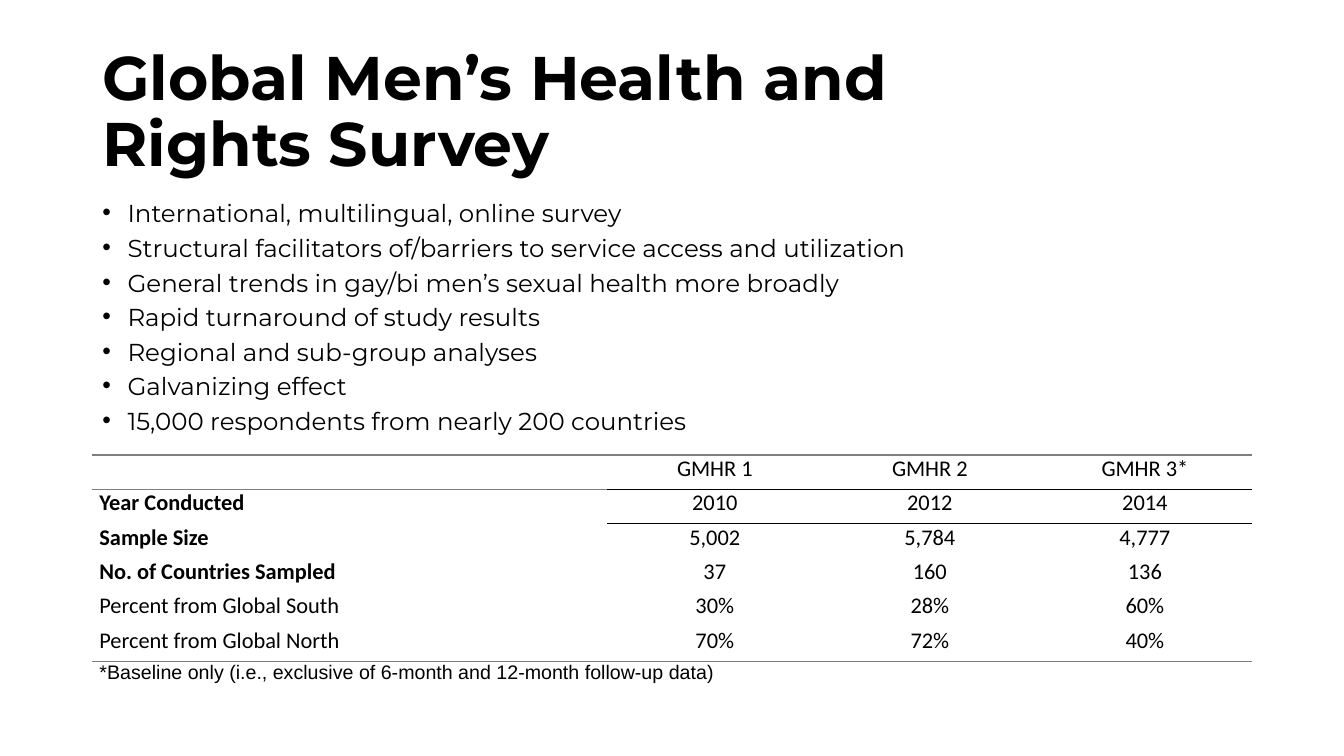
from lxml import etree
from pptx import Presentation
from pptx.dml.color import RGBColor
from pptx.enum.text import MSO_ANCHOR, MSO_AUTO_SIZE, PP_ALIGN
from pptx.oxml.ns import qn
from pptx.util import Inches, Pt

BLACK = RGBColor(0x00, 0x00, 0x00)
GREY = RGBColor(0x7F, 0x7F, 0x7F)
LEFT, CENTER = PP_ALIGN.LEFT, PP_ALIGN.CENTER
TOP, MIDDLE = MSO_ANCHOR.TOP, MSO_ANCHOR.MIDDLE
NO_AUTOFIT = MSO_AUTO_SIZE.NONE
NO_STYLE = "{2D5ABB26-0587-4C30-8999-92F81FD0307C}"
COLS, ROWS = 160, 90

TITLE = ["Global Men’s Health and ", "Rights Survey"]
BULLETS = [
    "International, multilingual, online survey",
    "Structural facilitators of/barriers to service access and utilization",
    "General trends in gay/bi men’s sexual health more broadly",
    "Rapid turnaround of study results",
    "Regional and sub-group analyses",
    "Galvanizing effect",
    "15,000 respondents from nearly 200 countries",
]
SURVEYS = [
    ["", "GMHR 1", "GMHR 2", "GMHR 3*"],
    ["Year Conducted", "2010", "2012", "2014"],
    ["Sample Size", "5,002", "5,784", "4,777"],
    ["No. of Countries Sampled", "37", "160", "136"],
    ["Percent from Global South", "30%", "28%", "60%"],
    ["Percent from Global North", "70%", "72%", "40%"],
]
BOLD_LABELS = {"Year Conducted", "Sample Size", "No. of Countries Sampled"}
FOOTNOTE = "*Baseline only (i.e., exclusive of 6-month and 12-month follow-up data)"


class SlideBuilder:
    """Adds styled elements to one slide on a grid of columns and rows."""

    def __init__(self, prs):
        self.col = prs.slide_width / COLS
        self.row = prs.slide_height / ROWS
        self.s = prs.slides.add_slide(prs.slide_layouts[5])

    def box(self, x, y, w, h):
        """Return grid lengths as slide lengths."""
        return (round(x * self.col), round(y * self.row),
                round(w * self.col), round(h * self.row))

    def run(self, p, text, size, font="Montserrat", bold=False):
        """Add one styled run to a paragraph."""
        r = p.add_run()
        r.text = text
        r.font.size = Pt(size)
        r.font.name = font
        r.font.bold = bold
        r.font.color.rgb = BLACK

    def frame(self, sp, anchor):
        """Prepare a shape's text frame."""
        tf = sp.text_frame
        tf.word_wrap = True
        tf.auto_size = NO_AUTOFIT
        tf.vertical_anchor = anchor
        return tf

    def title(self, lines, *area):
        """Place and fill the title."""
        sp = self.s.shapes.title
        sp.left, sp.top, sp.width, sp.height = self.box(*area)
        p = self.frame(sp, MIDDLE).paragraphs[0]
        p.alignment = LEFT
        p.line_spacing = 0.9
        for i, line in enumerate(lines):
            if i:
                p.add_line_break()
            self.run(p, line, 44, bold=True)

    def bullets(self, items, *area):
        """Add a bulleted list."""
        tf = self.frame(self.s.shapes.add_textbox(*self.box(*area)), TOP)
        for i, item in enumerate(items):
            p = tf.add_paragraph() if i else tf.paragraphs[0]
            p.line_spacing = 0.7
            p.space_before = Pt(10)
            pPr = p._p.get_or_add_pPr()
            pPr.set("marL", str(Inches(0.25)))
            pPr.set("indent", str(-Inches(0.25)))
            etree.SubElement(pPr, qn("a:buFont")).set("typeface", "Arial")
            etree.SubElement(pPr, qn("a:buChar")).set("char", "•")
            self.run(p, item, 17.5)

    def border(self, cell, side, color):
        """Draw a one-point line along a cell's side."""
        ln = etree.SubElement(cell._tc.get_or_add_tcPr(), qn(f"a:ln{side}"), w=str(Pt(1)))
        fill = etree.SubElement(ln, qn("a:solidFill"))
        etree.SubElement(fill, qn("a:srgbClr"), val=str(color))

    def table(self, rows, widths, heights, rules, x, y):
        """Add a plain table; rules maps a row to its top line's colour and first column."""
        area = self.box(x, y, sum(widths), sum(heights))
        tbl = self.s.shapes.add_table(len(rows), len(widths), *area).table
        tbl.first_row = tbl.horz_banding = False
        tbl._tbl.tblPr.find(qn("a:tableStyleId")).text = NO_STYLE
        for column, width in zip(tbl.columns, widths):
            column.width = round(width * self.col)
        for i, (texts, height) in enumerate(zip(rows, heights)):
            tbl.rows[i].height = round(height * self.row)
            for j in range(len(widths)):
                cell = tbl.cell(i, j)
                cell.margin_left = cell.margin_right = Inches(0.07)
                cell.margin_top = cell.margin_bottom = 0
                for side, edge in (("T", i), ("B", i + 1)):
                    color, first = rules.get(edge, (None, 0))
                    if color is not None and j >= first:
                        self.border(cell, side, color)
                cell.fill.background()
                if j < len(texts) and texts[j]:
                    p = cell.text_frame.paragraphs[0]
                    p.alignment = CENTER if j else LEFT
                    note = texts[j] == FOOTNOTE
                    self.run(p, texts[j], 14 if note else 16,
                             "Arial" if note else "Calibri", texts[j] in BOLD_LABELS)
            if len(texts) == 1:
                tbl.cell(i, 0).merge(tbl.cell(i, len(widths) - 1))


def main():
    prs = Presentation()
    prs.slide_width, prs.slide_height = Inches(13.33), Inches(7.5)
    slide = SlideBuilder(prs)
    slide.title(TITLE, 11, 4.8, 138, 17.4)
    slide.bullets(BULLETS, 11, 24, 138, 28.9)
    slide.table(
        [[""], *SURVEYS, [FOOTNOTE]],
        widths=[61.3] + [25.6] * 3,
        heights=[3.6] + [4.1] * len(SURVEYS) + [3.7],
        rules={1: (GREY, 0), 2: (BLACK, 1), 7: (GREY, 0)},
        x=11, y=50.5,
    )
    prs.save("out.pptx")


if __name__ == "__main__":
    main()
